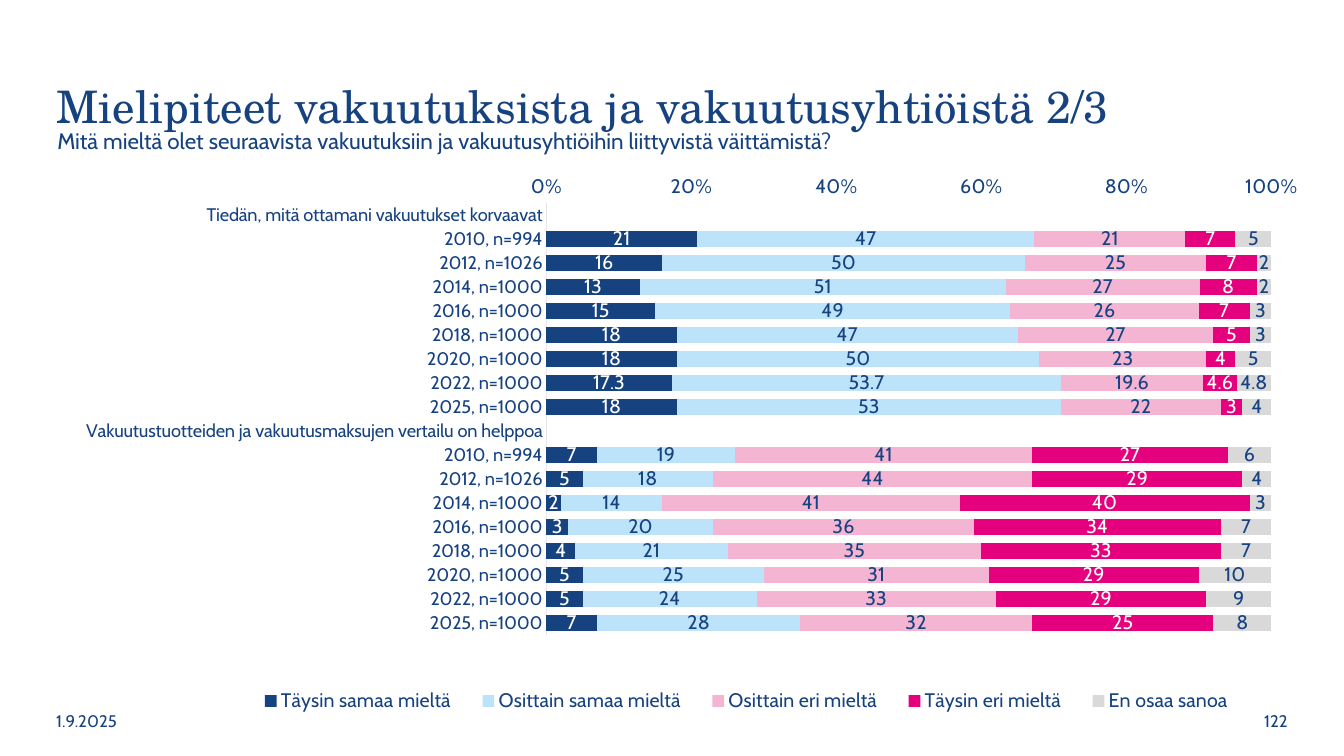
from lxml import etree
from pptx import Presentation
from pptx.chart.data import CategoryChartData
from pptx.dml.color import RGBColor
from pptx.enum.chart import (
    XL_AXIS_CROSSES as Crosses,
    XL_CHART_TYPE as ChartType,
    XL_LABEL_POSITION as LabelPosition,
    XL_LEGEND_POSITION as LegendPosition,
    XL_TICK_MARK as TickMark,
)
from pptx.enum.text import MSO_ANCHOR as Anchor, PP_ALIGN as Align
from pptx.oxml.ns import qn
from pptx.util import Inches, Pt

NAVY = RGBColor(0x16, 0x42, 0x80)
SKY = RGBColor(0xBC, 0xE3, 0xFA)
ROSE = RGBColor(0xF4, 0xB5, 0xD3)
MAGENTA = RGBColor(0xE5, 0x00, 0x7D)
GREY = RGBColor(0xD9, 0xD9, 0xD9)
AXIS_GREY = RGBColor(0xE6, 0xE6, 0xE6)
WHITE = RGBColor(0xFF, 0xFF, 0xFF)

BODY_FONT = "Cabin"
TITLE_FONT = "TeX Gyre Schola"
SLIDE_WIDTH, SLIDE_HEIGHT = Inches(13.33), Inches(7.5)
MARGIN = 3.45  # per cent of the slide width
FOOTER_TOP, FOOTER_WIDTH, FOOTER_HEIGHT = 92.67, 8.85, 5.33

SURVEYS = ["2010, n=994", "2012, n=1026"] + [
    f"{year}, n=1000" for year in (2014, 2016, 2018, 2020, 2022, 2025)
]
STATEMENTS = [
    "Tiedän, mitä ottamani vakuutukset korvaavat",
    "Vakuutustuotteiden ja vakuutusmaksujen vertailu on helppoa",
]
# Answer, bar colour, label colour, values for each statement
ANSWERS = [
    ("Täysin samaa mieltä", NAVY, WHITE,
     [[21, 16, 13, 15, 18, 18, 17.3, 18], [7, 5, 2, 3, 4, 5, 5, 7]]),
    ("Osittain samaa mieltä", SKY, NAVY,
     [[47, 50, 51, 49, 47, 50, 53.7, 53], [19, 18, 14, 20, 21, 25, 24, 28]]),
    ("Osittain eri mieltä", ROSE, NAVY,
     [[21, 25, 27, 26, 27, 23, 19.6, 22], [41, 44, 41, 36, 35, 31, 33, 32]]),
    ("Täysin eri mieltä", MAGENTA, WHITE,
     [[7, 7, 8, 7, 5, 4, 4.6, 3], [27, 29, 40, 34, 33, 29, 29, 25]]),
    ("En osaa sanoa", GREY, NAVY,
     [[5, 2, 2, 3, 3, 5, 4.8, 4], [6, 4, 3, 7, 7, 10, 9, 8]]),
]


def set_all(target, formats):
    for name, value in formats.items():
        setattr(target, name, value)


def place(left, top, width, height):
    """Turn per cents of the slide into lengths."""
    return (
        int(SLIDE_WIDTH * left / 100),
        int(SLIDE_HEIGHT * top / 100),
        int(SLIDE_WIDTH * width / 100),
        int(SLIDE_HEIGHT * height / 100),
    )


def style_font(font, size, color=NAVY, name=BODY_FONT):
    set_all(font, {"size": Pt(size), "name": name, "bold": False})
    font.color.rgb = color


def add_text(page, text, area, size, font=BODY_FONT, anchor=Anchor.MIDDLE,
             align=Align.LEFT, spacing=1.0):
    frame = page.shapes.add_textbox(*place(*area)).text_frame
    set_all(frame, {"word_wrap": True, "vertical_anchor": anchor})
    para = frame.paragraphs[0]
    set_all(para, {"text": text, "alignment": align, "line_spacing": spacing})
    style_font(para.runs[0].font, size, name=font)


def set_layout(element, follows, x, y, w, h, inner=False):
    """Fix a chart part's place, in shares of the chart, after the named child."""
    for old in element.findall(qn("c:layout")):
        element.remove(old)
    layout = etree.Element(qn("c:layout"))
    manual = etree.SubElement(layout, qn("c:manualLayout"))
    entries = {"layoutTarget": "inner"} if inner else {}
    entries.update(xMode="edge", yMode="edge", x=x, y=y, w=w, h=h)
    for name, value in entries.items():
        etree.SubElement(manual, qn(f"c:{name}")).set("val", str(value))
    if follows:
        element.find(qn(follows)).addnext(layout)
    else:
        element.insert(0, layout)


def survey_data():
    data = CategoryChartData(number_format="General")
    data.categories = [
        label for statement in STATEMENTS for label in [statement, *SURVEYS]
    ]
    for name, _, _, groups in ANSWERS:
        data.add_series(name, [v for group in groups for v in [None, *group]])
    return data


def style_axes(chart):
    no_ticks = {"major_tick_mark": TickMark.NONE, "minor_tick_mark": TickMark.NONE,
                "has_major_gridlines": False}
    surveys, shares = chart.category_axis, chart.value_axis
    set_all(surveys, {**no_ticks, "reverse_order": True, "crosses": Crosses.MAXIMUM})
    set_all(shares, {**no_ticks, "minimum_scale": 0, "maximum_scale": 1,
                     "major_unit": 0.2})
    style_font(surveys.tick_labels.font, 13)
    style_font(shares.tick_labels.font, 14)
    set_all(shares.tick_labels, {"number_format": "0%",
                                 "number_format_is_linked": False})
    surveys.format.line.color.rgb = AXIS_GREY
    surveys.format.line.width = Pt(0.75)
    shares.format.line.fill.background()


def style_series(plot):
    set_all(plot, {"gap_width": 50, "overlap": 100, "vary_by_categories": False})
    for series, (_, fill, label_color, _) in zip(plot.series, ANSWERS):
        series.format.fill.solid()
        series.format.fill.fore_color.rgb = fill
        labels = series.data_labels
        set_all(labels, {"show_value": True, "position": LabelPosition.CENTER})
        style_font(labels.font, 14, label_color)


def add_survey_chart(page, area):
    frame = page.shapes.add_chart(
        ChartType.BAR_STACKED_100, *place(*area), survey_data()
    )
    chart = frame.chart
    set_all(chart, {"has_title": False, "has_legend": True})
    style_font(chart.font, 14)
    style_axes(chart)
    style_series(chart.plots[0])
    set_all(chart.legend, {"position": LegendPosition.BOTTOM,
                           "include_in_layout": False})
    style_font(chart.legend.font, 14)
    root = chart.element
    set_layout(root.find(".//" + qn("c:plotArea")), None,
               0.4, 0.05, 0.58, 0.75, inner=True)
    set_layout(root.find(".//" + qn("c:legend")), "c:legendPos",
               0.155, 0.885, 0.81, 0.06)


def main():
    deck = Presentation()
    set_all(deck, {"slide_width": SLIDE_WIDTH, "slide_height": SLIDE_HEIGHT})
    page = deck.slides.add_slide(deck.slide_layouts[6])
    add_text(page, "Mielipiteet vakuutuksista ja vakuutusyhtiöistä 2/3",
             (MARGIN, 8, 86.7, 12.8), 32, font=TITLE_FONT, spacing=0.9)
    add_text(page, "122", (87.7, FOOTER_TOP, FOOTER_WIDTH, FOOTER_HEIGHT), 12,
             align=Align.RIGHT)
    add_text(page, "1.9.2025", (MARGIN, FOOTER_TOP, FOOTER_WIDTH, FOOTER_HEIGHT), 12)
    add_text(page, "Mitä mieltä olet seuraavista vakuutuksiin ja "
             "vakuutusyhtiöihin liittyvistä väittämistä?",
             (3.53, 16.13, 88.6, 4.93), 16, anchor=Anchor.TOP)
    add_survey_chart(page, (MARGIN, 23.07, 93.1, 76.13))
    deck.save("out.pptx")


if __name__ == "__main__":
    main()
